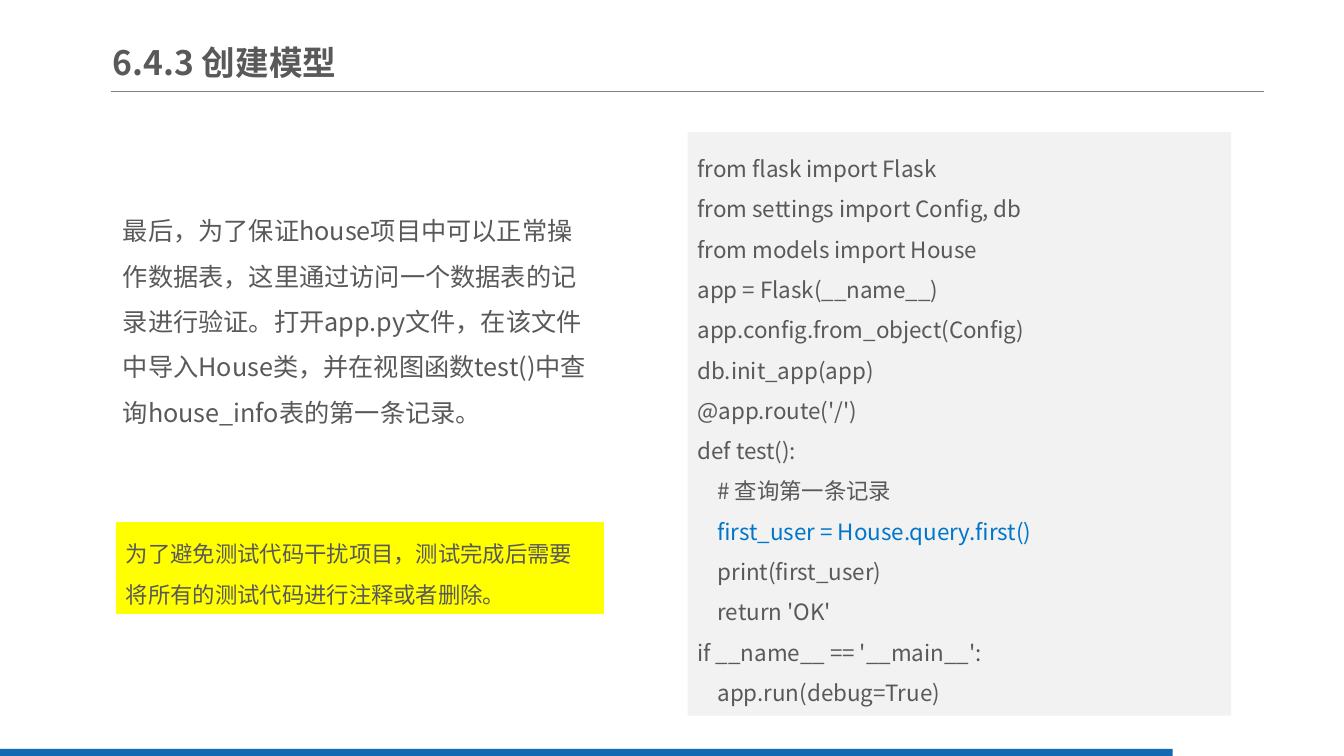
from lxml.etree import SubElement
from pptx import Presentation
from pptx.dml.color import RGBColor
from pptx.enum.shapes import MSO_CONNECTOR, MSO_SHAPE
from pptx.enum.text import MSO_ANCHOR, PP_ALIGN
from pptx.oxml.ns import qn
from pptx.util import Inches, Pt

COLOURS = {
    "text": "595959",
    "highlight": "0075CC",
    "rule": "808080",
    "bar": "1369B2",
    "code": "F2F2F2",
    "warning": "FFFF00",
}

CODE = """from flask import Flask
from settings import Config, db
from models import House
app = Flask(__name__)
app.config.from_object(Config)
db.init_app(app)
@app.route('/')
def test():
    # 查询第一条记录
    first_user = House.query.first()
    print(first_user)
    return 'OK'
if __name__ == '__main__':
    app.run(debug=True)"""


def colour(name):
    return RGBColor.from_string(COLOURS[name])


def write_text(frame, text, size=16, bold=False, spacing=1.5, anchor=MSO_ANCHOR.TOP,
               font="Noto Sans CJK SC", highlighted=()):
    """Fill a text frame with one paragraph per line of text."""
    frame.word_wrap = True
    frame.vertical_anchor = anchor
    for index, line in enumerate(text.split("\n")):
        para = frame.add_paragraph() if index else frame.paragraphs[0]
        para.alignment = PP_ALIGN.LEFT
        para.line_spacing = spacing
        span = para.add_run()
        span.text = line
        span.font.size = Pt(size)
        span.font.bold = bold
        span.font.color.rgb = colour("highlight" if line.strip() in highlighted else "text")
        span.font.name = font
        SubElement(span.font._element, qn("a:ea"), typeface=font)


class SlideBuilder:
    def __init__(self, page):
        self.page = page

    def rule(self, left, top, right):
        line = self.page.shapes.add_connector(
            MSO_CONNECTOR.STRAIGHT, Inches(left), Inches(top), Inches(right), Inches(top))
        line.line.color.rgb = colour("rule")
        line.line.width = Pt(0.75)
        SubElement(line._element.spPr, qn("a:effectLst"))

    def panel(self, left, top, width, height, fill, text=None, **style):
        box = self.page.shapes.add_shape(
            MSO_SHAPE.RECTANGLE, Inches(left), Inches(top), Inches(width), Inches(height))
        box.shadow.inherit = False
        box.fill.solid()
        box.fill.fore_color.rgb = colour(fill)
        box.line.fill.background()
        if text:
            write_text(box.text_frame, text, **style)

    def text(self, left, top, width, height, text, side_margin=0.1, **style):
        box = self.page.shapes.add_textbox(
            Inches(left), Inches(top), Inches(width), Inches(height))
        box.text_frame.margin_left = box.text_frame.margin_right = Inches(side_margin)
        write_text(box.text_frame, text, **style)


def main():
    deck = Presentation()
    deck.slide_width, deck.slide_height = Inches(13.33), Inches(7.5)
    builder = SlideBuilder(deck.slides.add_slide(deck.slide_layouts[6]))

    # Heading rule and footer bar
    builder.rule(1.1, 0.91, 12.54)
    builder.panel(0, 7.43, 11.63, 0.07, "bar")

    # Explanation and title
    builder.text(
        1.12, 1.94, 4.84, 2.37,
        "最后，为了保证house项目中可以正常操作数据表，这里通过访问一个数据表的记录进行验证。"
        "打开app.py文件，在该文件中导入House类，并在视图函数test()中查询house_info表的第一条记录。",
        size=18)
    builder.text(1.12, 0.34, 5.54, 0.55, "6.4.3 创建模型", side_margin=0,
                 size=24, bold=True, spacing=1.0, anchor=MSO_ANCHOR.MIDDLE)

    # Code listing
    builder.panel(6.82, 1.31, 5.39, 5.79, "code", CODE, anchor=MSO_ANCHOR.MIDDLE,
                  highlighted=("first_user = House.query.first()",))

    # Reminder
    builder.panel(1.15, 5.18, 4.84, 0.91, "warning",
                  "为了避免测试代码干扰项目，测试完成后需要将所有的测试代码进行注释或者删除。")

    deck.save("out.pptx")


if __name__ == "__main__":
    main()
